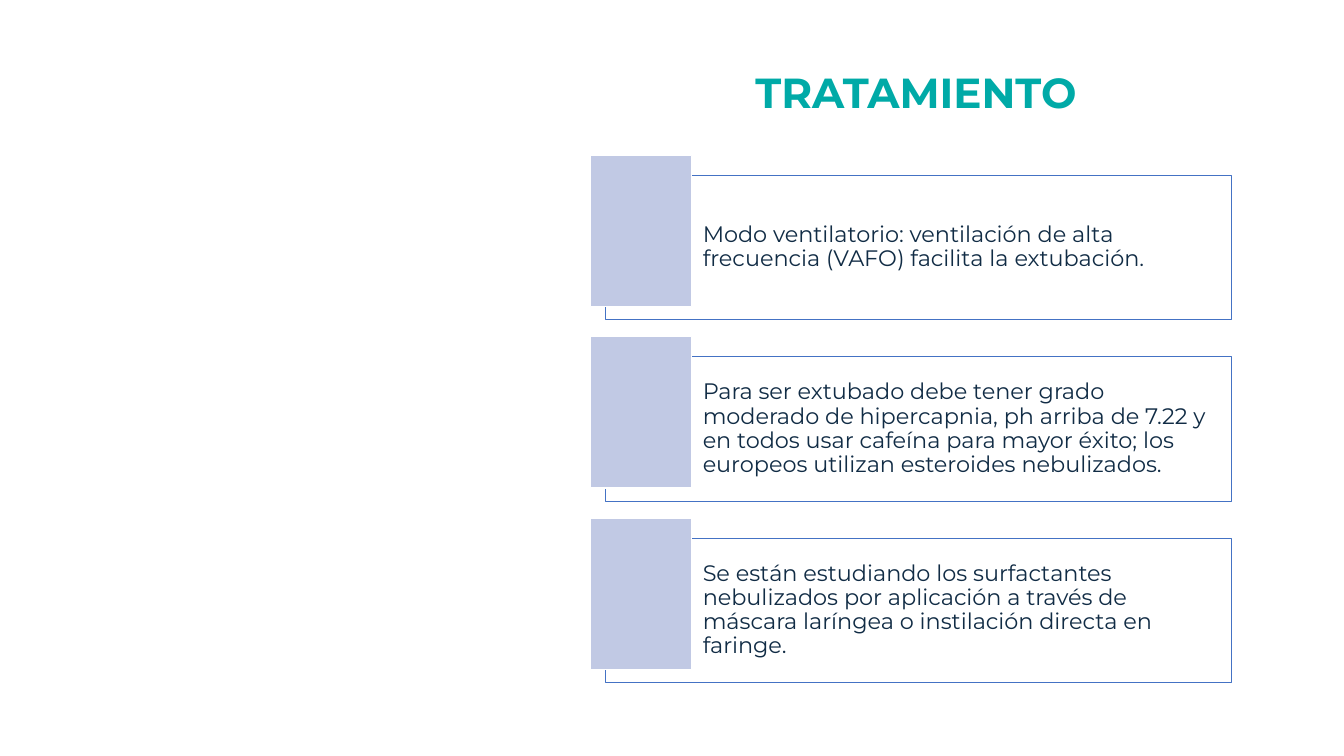
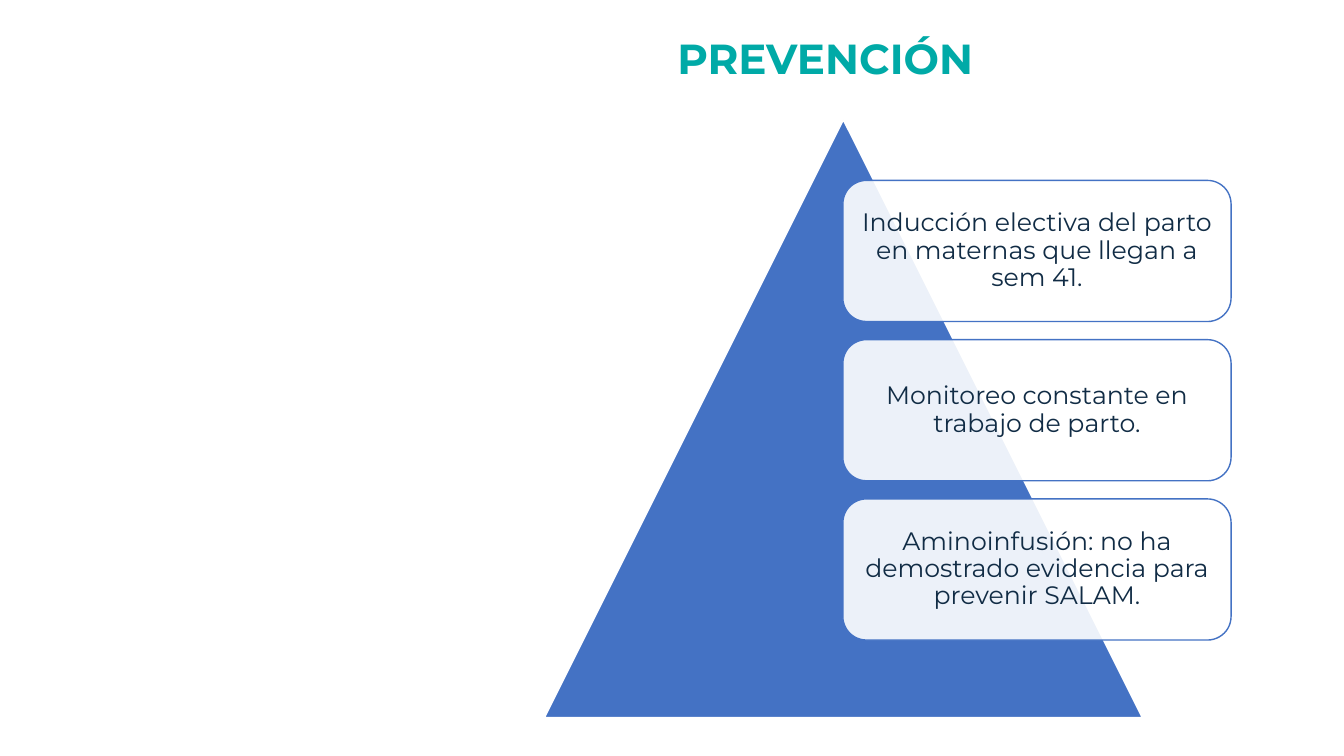
from lxml import etree
from pptx import Presentation
from pptx.dml.color import RGBColor
from pptx.enum.shapes import MSO_SHAPE
from pptx.enum.text import MSO_ANCHOR, PP_ALIGN
from pptx.oxml.ns import qn
from pptx.util import Pt

PX = 9144
FONT = "Montserrat"
COLORS = {
    "title": "00AAA7",
    "text": "112C45",
    "blue": "4472C4",
    "lilac": "C1C9E4",
    "white": "FFFFFF",
}
RECT = MSO_SHAPE.RECTANGLE
ROUND = MSO_SHAPE.ROUNDED_RECTANGLE
PEAK = MSO_SHAPE.ISOSCELES_TRIANGLE
LEFT, CENTER = PP_ALIGN.LEFT, PP_ALIGN.CENTER
MIDDLE = MSO_ANCHOR.MIDDLE

CARE = [
    "Modo ventilatorio: ventilación de alta frecuencia (VAFO) facilita la extubación.",
    "Para ser extubado debe tener grado moderado de hipercapnia, ph arriba de 7.22 y "
    "en todos usar cafeína para mayor éxito; los europeos utilizan esteroides nebulizados.",
    "Se están estudiando los surfactantes nebulizados por aplicación a través de "
    "máscara laríngea o instilación directa en faringe.",
]
STEPS = [
    "Inducción electiva del parto en maternas que llegan a sem 41.",
    "Monitoreo constante en trabajo de parto.",
    "Aminoinfusión: no ha demostrado evidencia para prevenir SALAM.",
]


def rgb(name):
    """Return the named colour."""
    return RGBColor.from_string(COLORS[name])


def scale(*sizes):
    """Turn px lengths into EMU."""
    return [size * PX for size in sizes]


def write(frame, text, size, color, align, bold=False):
    """Write one run into the first paragraph and return the paragraph."""
    frame.word_wrap = True
    para = frame.paragraphs[0]
    para.alignment = align
    run = para.add_run()
    run.text = text
    run.font.name = FONT
    run.font.size = Pt(size)
    run.font.bold = bold
    run.font.color.rgb = rgb(color)
    return para


def add_title(slide, text, box):
    """Add a slide title."""
    frame = slide.shapes.add_textbox(*scale(*box)).text_frame
    write(frame, text, 30, "title", CENTER, True)


def add_block(slide, kind, box, fill, line, width=1, alpha=100):
    """Add a filled, outlined shape, opaque by alpha percent."""
    shape = slide.shapes.add_shape(kind, *scale(*box))
    shape.shadow.inherit = False
    shape.fill.solid()
    shape.fill.fore_color.rgb = rgb(fill)
    shape.line.color.rgb = rgb(line)
    shape.line.width = Pt(width)
    if alpha < 100:
        tint = shape.fill._xPr.find(qn("a:solidFill"))[0]
        etree.SubElement(tint, qn("a:alpha")).set("val", str(alpha * 1000))
    return shape


def add_label(shape, text, size, align, left=7):
    """Put middle-anchored text inside a shape."""
    frame = shape.text_frame
    frame.vertical_anchor = MIDDLE
    frame.margin_left, frame.margin_right = scale(left, 7)
    frame.margin_top, frame.margin_bottom = scale(7, 7)
    write(frame, text, size, "text", align).line_spacing = 0.9


def add_care(slide):
    """Build the treatment slide."""
    add_title(slide, "TRATAMIENTO", (699, 61, 419, 61))
    for row, text in enumerate(CARE):
        top = 154 + row * 180
        card = add_block(slide, RECT, (600, top + 20, 621, 143), "white", "blue", 0.5, 40)
        add_label(card, text, 16, LEFT, 97)
        add_block(slide, RECT, (586, top, 100, 150), "lilac", "white")


def add_steps(slide):
    """Build the prevention slide."""
    add_title(slide, "PREVENCIÓN", (587, 27, 463, 61))
    add_block(slide, PEAK, (540, 119, 593, 593), "blue", "white")
    for row, text in enumerate(STEPS):
        box = (836, 179 + row * 158, 385, 140)
        card = add_block(slide, ROUND, box, "white", "blue", 1, 90)
        add_label(card, text, 18, CENTER)


def main():
    """Build and save the deck."""
    deck = Presentation()
    deck.slide_width, deck.slide_height = scale(1333, 750)
    for build in (add_care, add_steps):
        build(deck.slides.add_slide(deck.slide_layouts[6]))
    deck.save("out.pptx")


if __name__ == "__main__":
    main()
